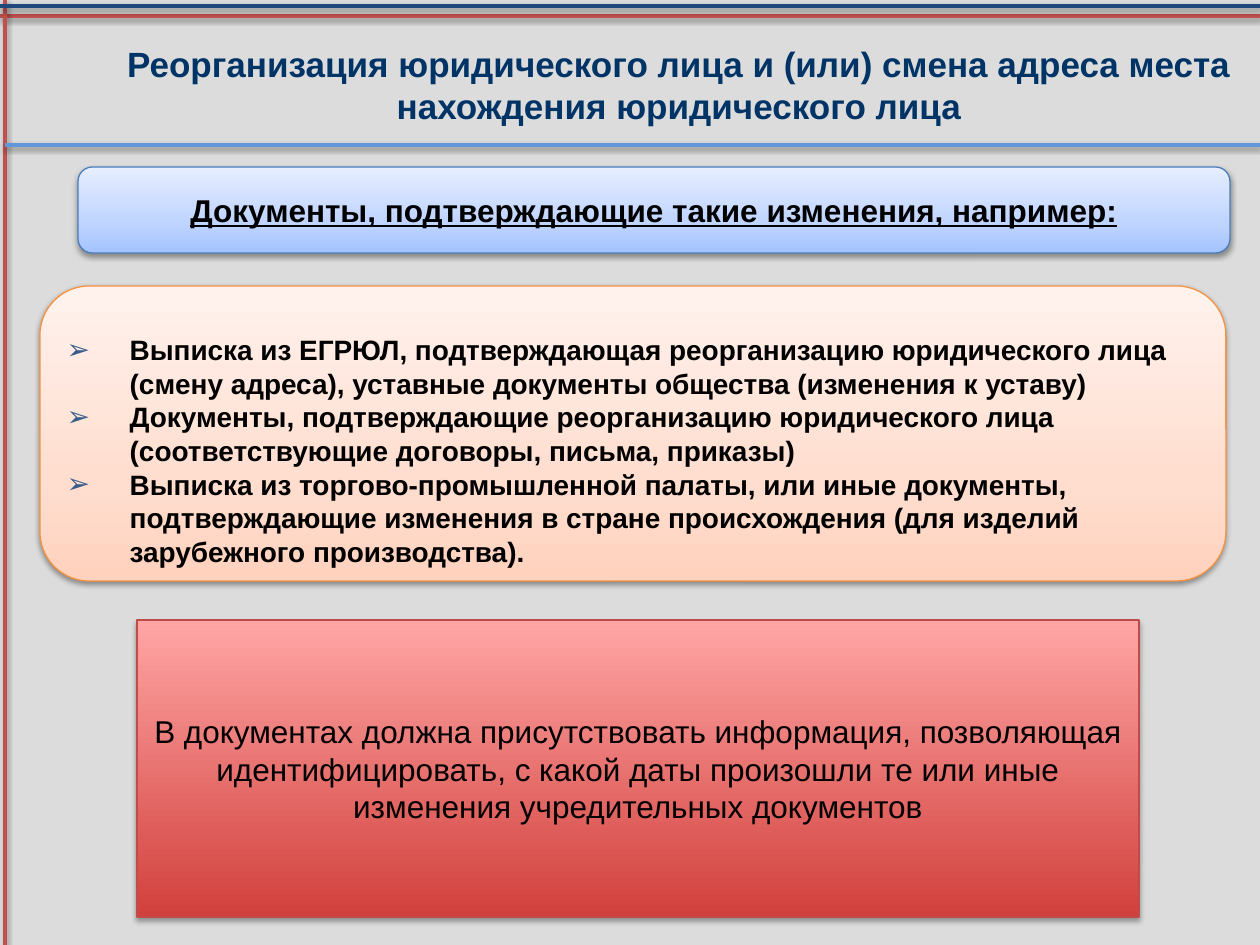
import pptx
import pptx.dml.color
import pptx.enum.shapes
import pptx.enum.text
import pptx.oxml.ns
import pptx.util
from lxml import etree

PIXELS_PER_INCH = 126
FONT = "Arial"
SHAPES = pptx.enum.shapes.MSO_SHAPE
CENTER = pptx.enum.text.PP_ALIGN.CENTER
LEFT = pptx.enum.text.PP_ALIGN.LEFT

TITLE = "Реорганизация юридического лица и (или) смена адреса места нахождения юридического лица"
HEADING = "Документы, подтверждающие такие изменения, например:"
DOCUMENTS = [
    "Выписка из ЕГРЮЛ, подтверждающая реорганизацию юридического лица (смену адреса), "
    "уставные документы общества (изменения к уставу)",
    "Документы, подтверждающие реорганизацию юридического лица "
    "(соответствующие договоры, письма, приказы)",
    "Выписка из торгово-промышленной палаты, или иные документы, подтверждающие изменения "
    "в стране происхождения (для изделий зарубежного производства).",
]
REQUIREMENT = (
    "В документах должна присутствовать информация, позволяющая идентифицировать, "
    "с какой даты произошли те или иные изменения учредительных документов"
)


def px(value):
    return pptx.util.Emu(round(value * 914400 / PIXELS_PER_INCH))


def color(value):
    return pptx.dml.color.RGBColor.from_string(value)


def add_element(parent, tag, **attributes):
    element = etree.SubElement(parent, pptx.oxml.ns.qn(tag))
    for name, value in attributes.items():
        element.set(name, str(value))
    return element


def add_shadow(properties, opacity=38, distance=1.6):
    effects = properties.find(pptx.oxml.ns.qn("a:effectLst"))
    if effects is None:
        effects = add_element(properties, "a:effectLst")
    shadow = add_element(
        effects, "a:outerShdw", blurRad=pptx.util.Pt(3.1), dist=pptx.util.Pt(distance),
        dir=90 * 60000, rotWithShape=0,
    )
    shade = add_element(shadow, "a:srgbClr", val="000000")
    add_element(shade, "a:alpha", val=opacity * 1000)


def add_rule(slide, start, end, line_color):
    points = [px(value) for value in (*start, *end)]
    rule = slide.shapes.add_connector(pptx.enum.shapes.MSO_CONNECTOR.STRAIGHT, *points)
    rule.line.color.rgb = color(line_color)
    rule.line.width = pptx.util.Pt(2)
    add_shadow(rule._element.spPr)


def write_text(shape, texts, size, text_color="000000", bold=False, underline=False,
               alignment=CENTER, bullet_color=None):
    frame = shape.text_frame
    frame.word_wrap = True
    frame.vertical_anchor = pptx.enum.text.MSO_ANCHOR.MIDDLE
    for index, text in enumerate(texts):
        paragraph = frame.add_paragraph() if index else frame.paragraphs[0]
        paragraph.text = text
        paragraph.alignment = alignment
        if bullet_color:
            add_bullet(paragraph, bullet_color)
        paragraph.font.name = FONT
        paragraph.font.size = pptx.util.Pt(size)
        paragraph.font.bold = bold
        paragraph.font.underline = underline
        paragraph.font.color.rgb = color(text_color)


def add_bullet(paragraph, bullet_color):
    properties = paragraph._p.get_or_add_pPr()
    properties.set("marL", str(px(63)))
    properties.set("indent", str(-px(63)))
    add_element(add_element(properties, "a:buClr"), "a:srgbClr", val=bullet_color)
    add_element(properties, "a:buFont", typeface=FONT)
    add_element(properties, "a:buChar", char="➢")


def add_panel(slide, kind, box, stops, line_color, **shadow):
    panel = slide.shapes.add_shape(kind, *[px(value) for value in box])
    panel.shadow.inherit = False
    panel.fill.gradient()
    panel.fill.gradient_angle = 90
    properties = panel._element.spPr
    stop_list = properties.find(".//" + pptx.oxml.ns.qn("a:gsLst"))
    stop_list.clear()
    for position, stop_color in stops:
        stop = add_element(stop_list, "a:gs", pos=position * 1000)
        add_element(stop, "a:srgbClr", val=stop_color)
    panel.line.color.rgb = color(line_color)
    panel.line.width = pptx.util.Pt(0.75)
    add_shadow(properties, **shadow)
    return panel


def main():
    presentation = pptx.Presentation()
    presentation.slide_width = px(1260)
    presentation.slide_height = px(945)
    slide = presentation.slides.add_slide(presentation.slide_layouts[6])
    slide.background.fill.solid()
    slide.background.fill.fore_color.rgb = color("DCDCDC")

    add_rule(slide, (1260, 16), (0, 16), "C0504D")
    add_rule(slide, (5, 0), (5, 945), "C0504D")
    add_rule(slide, (0, 6), (1260, 6), "1F497D")
    add_rule(slide, (5, 145), (1260, 145), "6497DA")

    title = slide.shapes.add_textbox(px(98), px(21), px(1162), px(127))
    write_text(title, [TITLE], 20, text_color="003366", bold=True)

    heading = add_panel(
        slide, SHAPES.ROUNDED_RECTANGLE, (78, 167, 1152, 86),
        [(0, "A4C4FF"), (35, "BFD4FF"), (100, "E6EEFF")], "4B7EBC",
    )
    write_text(heading, [HEADING], 18, bold=True, underline=True)

    documents = add_panel(
        slide, SHAPES.ROUNDED_RECTANGLE, (40, 286, 1186, 295),
        [(0, "FFD2BD"), (35, "FFDED0"), (100, "FFF2ED")], "F69240",
    )
    documents.text_frame.margin_top = px(40)
    write_text(documents, DOCUMENTS, 16, bold=True, alignment=LEFT, bullet_color="385D8A")

    requirement = add_panel(
        slide, SHAPES.RECTANGLE, (137, 620, 1002, 297),
        [(0, "D1403C"), (100, "FFA6A5")], "BF4C48", opacity=35, distance=1.8,
    )
    write_text(requirement, [REQUIREMENT], 18)

    presentation.save("out.pptx")


if __name__ == "__main__":
    main()
